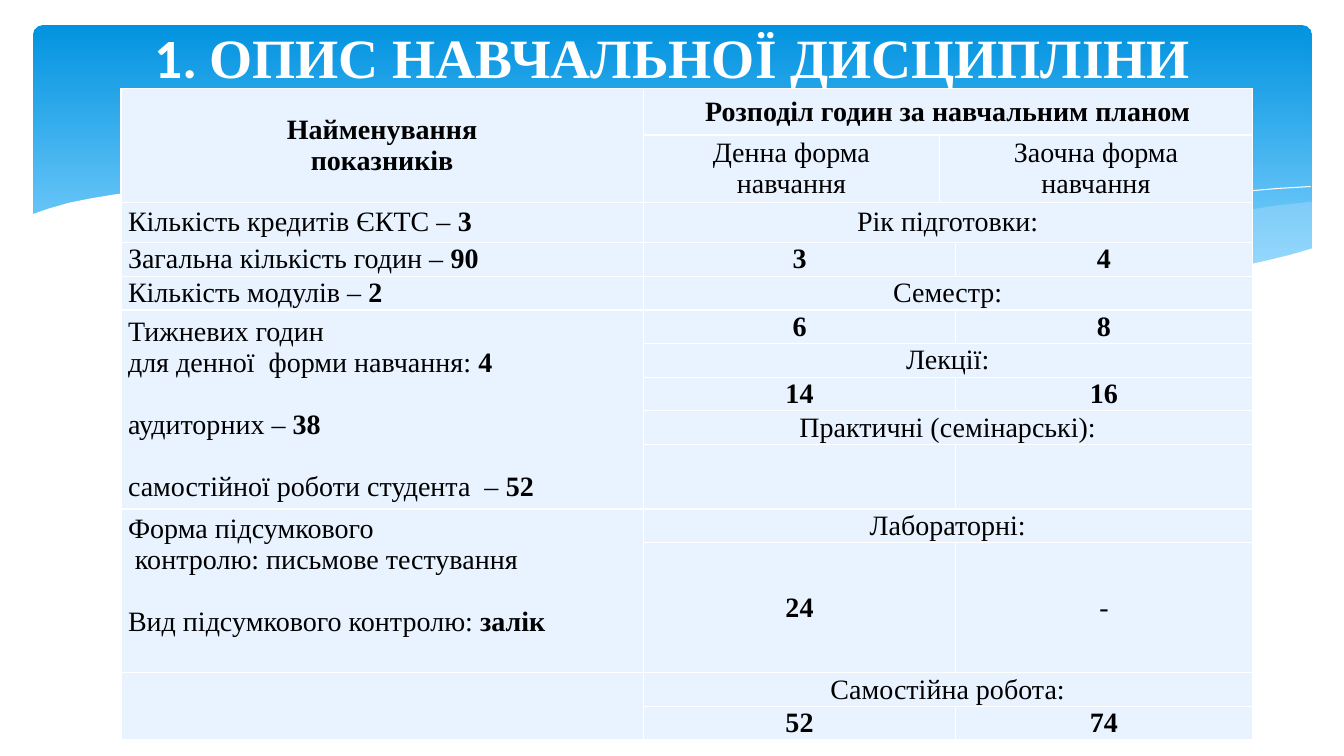
"""Build the course description slide: a blue wave banner, a title and a table of study hours."""
from lxml import etree
from pptx import Presentation
from pptx.dml.color import RGBColor
from pptx.enum.shapes import MSO_SHAPE
from pptx.enum.text import MSO_ANCHOR, PP_ALIGN
from pptx.oxml.ns import qn
from pptx.util import Inches, Pt

ROUNDED = MSO_SHAPE.ROUNDED_RECTANGLE
TOP, MIDDLE = MSO_ANCHOR.TOP, MSO_ANCHOR.MIDDLE
LEFT, CENTER = PP_ALIGN.LEFT, PP_ALIGN.CENTER
COLORS = {
    "sky_top": "0293E0",
    "sky_bottom": "83D3FE",
    "wave": "C6E7FC",
    "white": "FFFFFF",
    "cell": "E8F3FF",
    "text": "000000",
}
RGB = {name: RGBColor.from_string(value) for name, value in COLORS.items()}
SERIF = "Times New Roman"
GAP = 22


def draw_wave(page, points, closed):
    """Draw an outline through points given in inches."""
    corners = [(Inches(x), Inches(y)) for x, y in points]
    builder = page.shapes.build_freeform(*corners[0])
    builder.add_line_segments(corners[1:], close=closed)
    wave = builder.convert_to_shape()
    wave.shadow.inherit = False
    return wave


def write_cell(cell, lines, align, anchor=MIDDLE):
    """Fill a cell with lines of (plain text, bold text, space before)."""
    cell.vertical_anchor = anchor
    for index, (plain, bold, gap) in enumerate(lines):
        frame = cell.text_frame
        para = frame.add_paragraph() if index else frame.paragraphs[0]
        para.alignment = align
        para.space_before = Pt(gap)
        for text, is_bold in ((plain, False), (bold, True)):
            if text:
                span = para.add_run()
                span.text = text
                span.font.name = SERIF
                span.font.size = Pt(20)
                span.font.bold = is_bold
                span.font.color.rgb = RGB["text"]


deck = Presentation()
deck.slide_width, deck.slide_height = Inches(13.33), Inches(7.5)
page = deck.slides.add_slide(deck.slide_layouts[6])

banner = page.shapes.add_shape(ROUNDED, Inches(0.33), Inches(0.25), Inches(12.68), Inches(2.7))
banner.adjustments[0] = 0.034
banner.shadow.inherit = False
banner.line.fill.background()
banner.fill.gradient()
banner.fill.gradient_angle = 270
for stop, position, name in zip(banner.fill.gradient_stops, (0, 0.9), ("sky_top", "sky_bottom")):
    stop.position = position
    stop.color.rgb = RGB[name]

right_wave = [
    (13.01, 2), (12.65, 2.04), (12.27, 2.1), (11.88, 2.16), (11.47, 2.23), (10.73, 2.37),
    (10.05, 2.48), (9.41, 2.57), (8.82, 2.65), (9.21, 2.69), (9.58, 2.72), (9.93, 2.75),
    (10.25, 2.77), (10.71, 2.78), (11.26, 2.77), (11.63, 2.74), (11.96, 2.7), (12.28, 2.65),
    (12.57, 2.59), (12.84, 2.52), (13.01, 2.47),
]
middle_wave = [
    (11.9, 2.73), (11.16, 2.65), (10.34, 2.54), (9.41, 2.4), (8.39, 2.22), (7.78, 2.11),
    (7.21, 2.03), (6.69, 1.96), (6.19, 1.91), (5.6, 1.87), (5.06, 1.85), (4.59, 1.86),
    (4.18, 1.88), (3.82, 1.91), (4.31, 1.96), (4.83, 2.03), (5.39, 2.11), (5.99, 2.22),
    (7.06, 2.4), (8.02, 2.55), (8.87, 2.66), (9.63, 2.74), (10.3, 2.77), (10.9, 2.78),
    (11.43, 2.77), (11.9, 2.73),
]
for points, alpha in ((right_wave, 29), (middle_wave, 40)):
    wave = draw_wave(page, points, True)
    wave.line.fill.background()
    wave.fill.solid()
    wave.fill.fore_color.rgb = RGB["wave"]
    color = wave.fill._xPr.find(qn("a:solidFill"))[0]
    etree.SubElement(color, qn("a:alpha"), val=str(alpha * 1000))

long_ripple = [
    (4.12, 1.95), (4.38, 1.92), (4.7, 1.89), (5.16, 1.87), (5.77, 1.87), (6.25, 1.89),
    (6.8, 1.92), (7.42, 1.97), (8.11, 2.04), (8.86, 2.13), (9.7, 2.26), (10.6, 2.41),
    (11.58, 2.61), (12.1, 2.72),
]
short_ripple = [
    (8.18, 2.57), (8.7, 2.46), (9.27, 2.35), (9.97, 2.23), (10.75, 2.1), (11.55, 1.99),
    (11.94, 1.94), (12.32, 1.9), (12.67, 1.87), (13, 1.85),
]
for points in (long_ripple, short_ripple):
    ripple = draw_wave(page, points, False)
    ripple.fill.background()
    ripple.line.color.rgb = RGB["white"]
    ripple.line.width = Pt(0)

white_wave = [
    (13.03, 2.46), (12.79, 2.53), (12.54, 2.59), (12.27, 2.65), (11.98, 2.69), (11.67, 2.73),
    (11.34, 2.75), (10.97, 2.77), (10.58, 2.76), (10.15, 2.75), (9.69, 2.72), (9.18, 2.68),
    (8.63, 2.62), (8.04, 2.54), (7.4, 2.45), (6.71, 2.33), (5.96, 2.2), (5.21, 2.07),
    (4.53, 1.97), (3.9, 1.9), (3.33, 1.86), (2.82, 1.84), (2.14, 1.84), (1.76, 1.86),
    (1.42, 1.89), (1.13, 1.93), (0.89, 1.97), (0.69, 2.01), (0.48, 2.07), (0.31, 2.13),
    (0.31, 3.29), (13.03, 3.29),
]
foreground = draw_wave(page, white_wave, True)
foreground.line.fill.background()
foreground.fill.solid()
foreground.fill.fore_color.rgb = RGB["white"]

title = page.shapes.add_textbox(Inches(0.92), Inches(0.4), Inches(11.5), Inches(0.91))
frame = title.text_frame
frame.word_wrap = True
frame.vertical_anchor = MIDDLE
frame.margin_top, frame.margin_bottom = 0, Inches(0.6)
para = frame.paragraphs[0]
para.alignment = CENTER
for text, font in (("1. ", "Calibri"), ("ОПИС НАВЧАЛЬНОЇ ДИСЦИПЛІНИ", SERIF)):
    span = para.add_run()
    span.text = text
    span.font.name = font
    span.font.size = Pt(39.6)
    span.font.bold = True
    span.font.color.rgb = RGB["white"]

widths = [5.18, 2.94, 0.16, 2.94]
heights = [0.46, 0.64, 0.4] + [0.32] * 6 + [0.64, 0.32, 1.29, 0.32, 0.32]
hours = page.shapes.add_table(
    len(heights), len(widths), Inches(1.2), Inches(0.88), Inches(sum(widths)), Inches(sum(heights))
).table
hours.first_row = hours.horz_banding = False
for column, width in zip(hours.columns, widths):
    column.width = Inches(width)
for row, height in zip(hours.rows, heights):
    row.height = Inches(height)
for cell in hours.iter_cells():
    cell.fill.solid()
    cell.fill.fore_color.rgb = RGB["cell"]
    cell.margin_left = cell.margin_right = Inches(0.07)
    cell.margin_top = cell.margin_bottom = 0

indicators = [
    (0, 1, CENTER, MIDDLE, [("", "Найменування", 0), ("", "показників", 0)]),
    (2, 2, LEFT, MIDDLE, [("Кількість кредитів ЄКТС – ", "3", 0)]),
    (3, 3, LEFT, MIDDLE, [("Загальна кількість годин – ", "90", 0)]),
    (4, 4, LEFT, MIDDLE, [("Кількість модулів – ", "2", 0)]),
    (5, 9, LEFT, MIDDLE, [
        ("Тижневих годин", "", 0), ("для денної  форми навчання: ", "4", 0),
        ("аудиторних – ", "38", GAP), ("самостійної роботи студента  – ", "52", GAP)]),
    (10, 11, LEFT, TOP, [
        ("Форма підсумкового", "", 0), (" контролю: письмове тестування", "", 0),
        ("Вид підсумкового контролю: ", "залік", GAP)]),
    (12, 13, LEFT, MIDDLE, []),
]
for first, last, align, anchor, lines in indicators:
    cell = hours.cell(first, 0)
    if last > first:
        cell.merge(hours.cell(last, 0))
    write_cell(cell, lines, align, anchor)
hours.cell(10, 0).margin_top = Inches(0.04)

headings = {2: "Рік підготовки:", 4: "Семестр:", 6: "Лекції:", 8: "Практичні (семінарські):",
            10: "Лабораторні:", 12: "Самостійна робота:"}
spans = [(0, [("", "Розподіл годин за навчальним планом", 0)])]
spans += [(row, [(text, "", 0)]) for row, text in headings.items()]
for row, lines in spans:
    hours.cell(row, 1).merge(hours.cell(row, 3))
    write_cell(hours.cell(row, 1), lines, CENTER)

hours.cell(1, 2).merge(hours.cell(1, 3))
for column, form in ((1, "Денна форма"), (2, "Заочна форма")):
    write_cell(hours.cell(1, column), [(form, "", 0), ("навчання", "", 0)], CENTER)

values = {3: ("3", "4"), 5: ("6", "8"), 7: ("14", "16"), 9: ("", ""), 11: ("24", "-"), 13: ("52", "74")}
for row, pair in values.items():
    hours.cell(row, 1).merge(hours.cell(row, 2))
    for column, value in zip((1, 3), pair):
        line = ("", value, 0) if value.isdigit() else (value, "", 0)
        write_cell(hours.cell(row, column), [line], CENTER)

deck.save("out.pptx")
